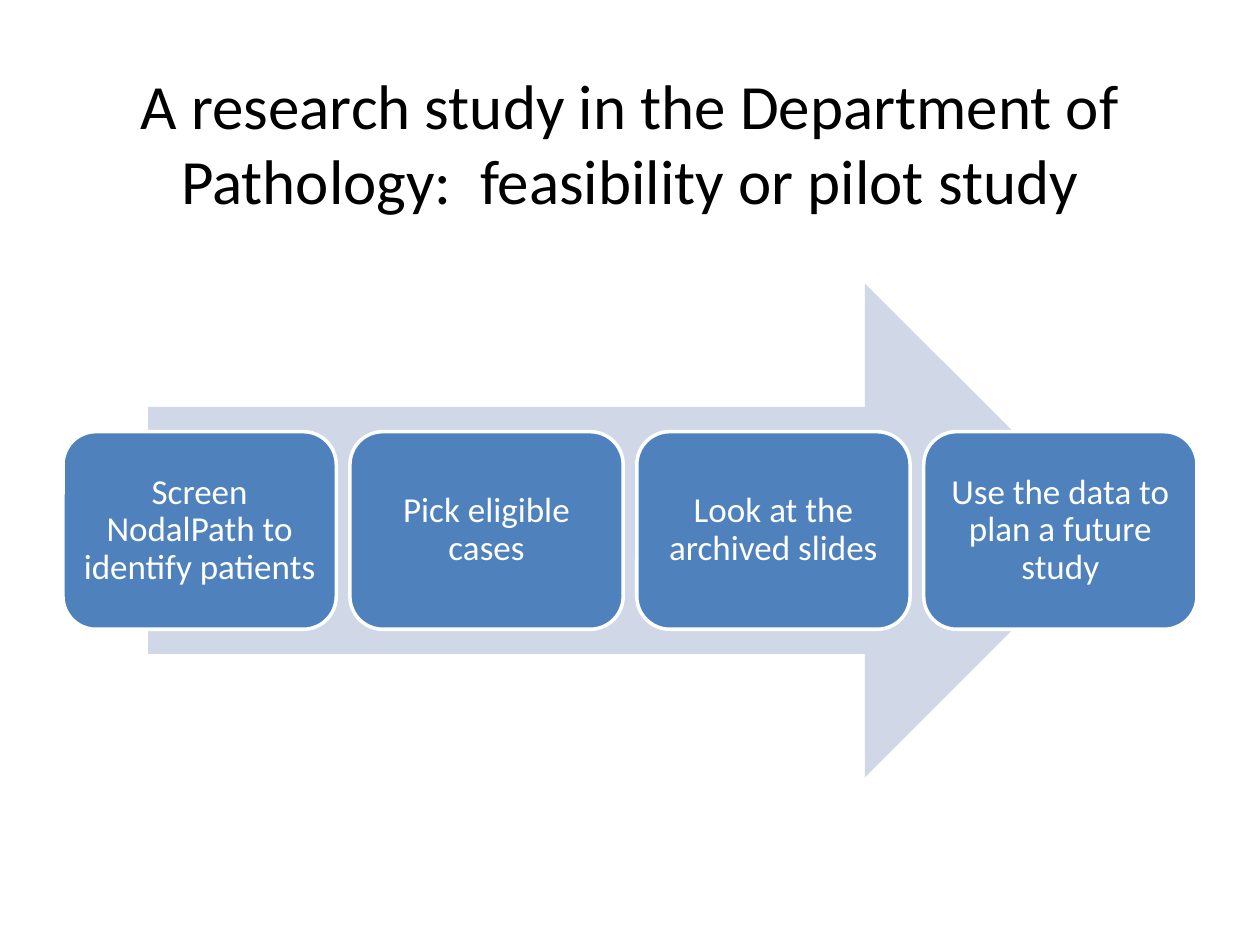
from pptx import Presentation
from pptx import util as u
from pptx.dml.color import RGBColor
from pptx.enum import shapes, text

BLACK = RGBColor(0x00, 0x00, 0x00)
WHITE = RGBColor(0xFF, 0xFF, 0xFF)
BLUE = RGBColor(0x4F, 0x81, 0xBD)
PALE = RGBColor(0xD0, 0xD8, 0xE8)
FONT = "Calibri"

WIDE, HIGH = u.Inches(10), u.Inches(7.5)
EDGE = WIDE // 20
STEPS = [
    "Screen NodalPath to identify patients",
    "Pick eligible cases",
    "Look at the archived slides",
    "Use the data to plan a future study",
]


def write(frame, words, size, color, inset=None):
    """Centre one run of text in the frame, both ways."""
    frame.word_wrap = True
    frame.vertical_anchor = text.MSO_ANCHOR.MIDDLE
    if inset is not None:
        frame.margin_left = frame.margin_right = inset
        frame.margin_top = frame.margin_bottom = inset
    para = frame.paragraphs[0]
    para.alignment = text.PP_ALIGN.CENTER
    run = para.add_run()
    run.text = words
    run.font.name = FONT
    run.font.size = u.Pt(size)
    run.font.color.rgb = color
    return para


def add_flat(slide, kind, box, fill):
    """Add a preset shape with a plain fill, no line and no shadow."""
    shape = slide.shapes.add_shape(kind, *box)
    shape.shadow.inherit = False
    shape.fill.solid()
    shape.fill.fore_color.rgb = fill
    shape.line.fill.background()
    return shape


def add_title(slide, box, words):
    frame = slide.shapes.add_textbox(*box).text_frame
    write(frame, words, 36, BLACK)


def add_flow(slide, box, steps):
    """Lay a row of step cards over a wide arrow."""
    left, top, wide, high = box
    span = int(wide * 0.85)
    add_flat(slide, shapes.MSO_SHAPE.RIGHT_ARROW,
             (left + (wide - span) // 2, top, span, high), PALE)

    gap = int(wide * 0.012)
    card = (wide - gap * (len(steps) - 1)) // len(steps)
    tall = int(high * 0.4)
    for col, words in enumerate(steps):
        place = (left + col * (card + gap), top + (high - tall) // 2, card, tall)
        shape = add_flat(slide, shapes.MSO_SHAPE.ROUNDED_RECTANGLE, place, BLUE)
        shape.line.color.rgb = WHITE
        shape.line.width = u.Pt(2)
        para = write(shape.text_frame, words, 20, WHITE, u.Inches(0.08))
        para.line_spacing = 0.9


def main():
    deck = Presentation()
    deck.slide_width, deck.slide_height = WIDE, HIGH
    slide = deck.slides.add_slide(deck.slide_layouts[6])
    body = WIDE - 2 * EDGE
    add_title(slide, (EDGE, EDGE, body, HIGH // 6),
              "A research study in the Department of Pathology:  feasibility or pilot study")
    add_flow(slide, (EDGE, int(HIGH * 0.3), body, u.Inches(3.92)), STEPS)
    deck.save("out.pptx")


if __name__ == "__main__":
    main()
